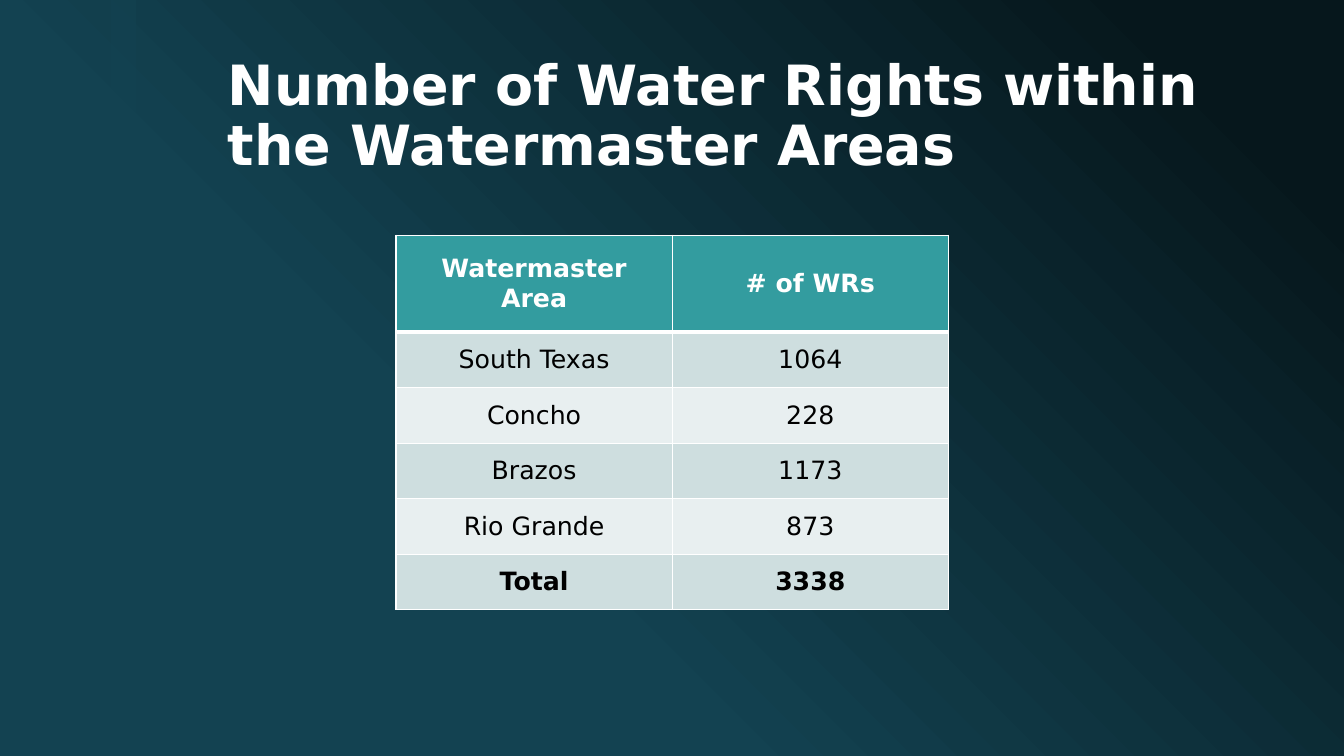
"""Build a slide that tabulates water rights by watermaster area."""
import dataclasses

import lxml.etree
import pptx
import pptx.dml.color
import pptx.enum.shapes
import pptx.enum.text
import pptx.oxml.ns
import pptx.util

TITLE = "Number of Water Rights within the Watermaster Areas"
ROWS = [
    ("Watermaster Area", "# of WRs"),
    ("South Texas", "1064"),
    ("Concho", "228"),
    ("Brazos", "1173"),
    ("Rio Grande", "873"),
    ("Total", "3338"),
]

Cm, Pt = pptx.util.Cm, pptx.util.Pt
RGB = pptx.dml.color.RGBColor.from_string
qn = pptx.oxml.ns.qn


@dataclasses.dataclass(frozen=True)
class Theme:
    font: str = "DejaVu Sans"
    dark: str = "06171C"
    teal: str = "134251"
    header: str = "339C9F"
    bands: tuple = ("CEDEDF", "E8EFF0")
    light: str = "FFFFFF"
    ink: str = "000000"
    title_size: float = 39.6
    cell_size: float = 18
    thin: float = 1
    thick: float = 3


THEME = Theme()


def set_font(para, size, color, bold):
    para.font.name = THEME.font
    para.font.size = Pt(size)
    para.font.color.rgb = RGB(color)
    para.font.bold = bold


def paint_background(page):
    fill = page.background.fill
    fill.gradient()
    fill.gradient_angle = 225
    stops = ((0.1, THEME.dark), (0.65, THEME.teal))
    for stop, (position, color) in zip(fill.gradient_stops, stops):
        stop.position = position
        stop.color.rgb = RGB(color)


def add_stripe(page, height):
    stripe = page.shapes.add_shape(
        pptx.enum.shapes.MSO_SHAPE.RECTANGLE, Cm(2.79), 0, Cm(0.64), height)
    stripe.shadow.inherit = False
    stripe.line.fill.background()
    stripe.fill.solid()
    stripe.fill.fore_color.rgb = RGB(THEME.teal)
    color = stripe.fill._xPr.find(qn("a:solidFill"))[0]
    lxml.etree.SubElement(color, qn("a:alpha"), val="60000")


def fill_title(page):
    title = page.shapes.title
    title.left, title.top, title.width, title.height = Cm(5.49), Cm(1.27), Cm(26.04), Cm(4.65)
    frame = title.text_frame
    frame.text = TITLE
    frame.word_wrap = True
    frame.auto_size = pptx.enum.text.MSO_AUTO_SIZE.NONE
    frame.vertical_anchor = pptx.enum.text.MSO_ANCHOR.BOTTOM
    frame.margin_bottom = Cm(1.45)
    para = frame.paragraphs[0]
    para.alignment = pptx.enum.text.PP_ALIGN.LEFT
    para.line_spacing = 0.9
    set_font(para, THEME.title_size, THEME.light, True)


def add_borders(cell, widths):
    properties = cell._tc.get_or_add_tcPr()
    for side, width in widths.items():
        line = lxml.etree.SubElement(properties, qn(f"a:ln{side}"), w=str(Pt(width)))
        solid = lxml.etree.SubElement(line, qn("a:solidFill"))
        lxml.etree.SubElement(solid, qn("a:srgbClr"), val=THEME.light)


def fill_cell(cell, text, row):
    header = row == 0
    widths = dict.fromkeys("LRTB", THEME.thin)
    if header:
        widths["B"] = THEME.thick
    elif row == 1:
        widths["T"] = THEME.thick
    add_borders(cell, widths)
    cell.fill.solid()
    cell.fill.fore_color.rgb = RGB(THEME.header if header else THEME.bands[(row - 1) % 2])
    cell.text = text
    cell.vertical_anchor = pptx.enum.text.MSO_ANCHOR.MIDDLE
    para = cell.text_frame.paragraphs[0]
    para.alignment = pptx.enum.text.PP_ALIGN.CENTER
    set_font(para, THEME.cell_size, THEME.light if header else THEME.ink,
             row in (0, len(ROWS) - 1))


def add_rights_table(page):
    heights = [Cm(2.44)] + [Cm(1.4)] * (len(ROWS) - 1)
    table = page.shapes.add_table(
        len(ROWS), len(ROWS[0]), Cm(9.98), Cm(5.93), Cm(13.92), sum(heights)).table
    for row, (texts, height) in enumerate(zip(ROWS, heights)):
        table.rows[row].height = height
        for column, text in enumerate(texts):
            fill_cell(table.cell(row, column), text, row)


def main():
    deck = pptx.Presentation()
    deck.slide_width, deck.slide_height = Cm(33.87), Cm(19.05)
    page = deck.slides.add_slide(deck.slide_layouts[5])
    paint_background(page)
    add_stripe(page, deck.slide_height)
    fill_title(page)
    add_rights_table(page)
    deck.save("out.pptx")


if __name__ == "__main__":
    main()
